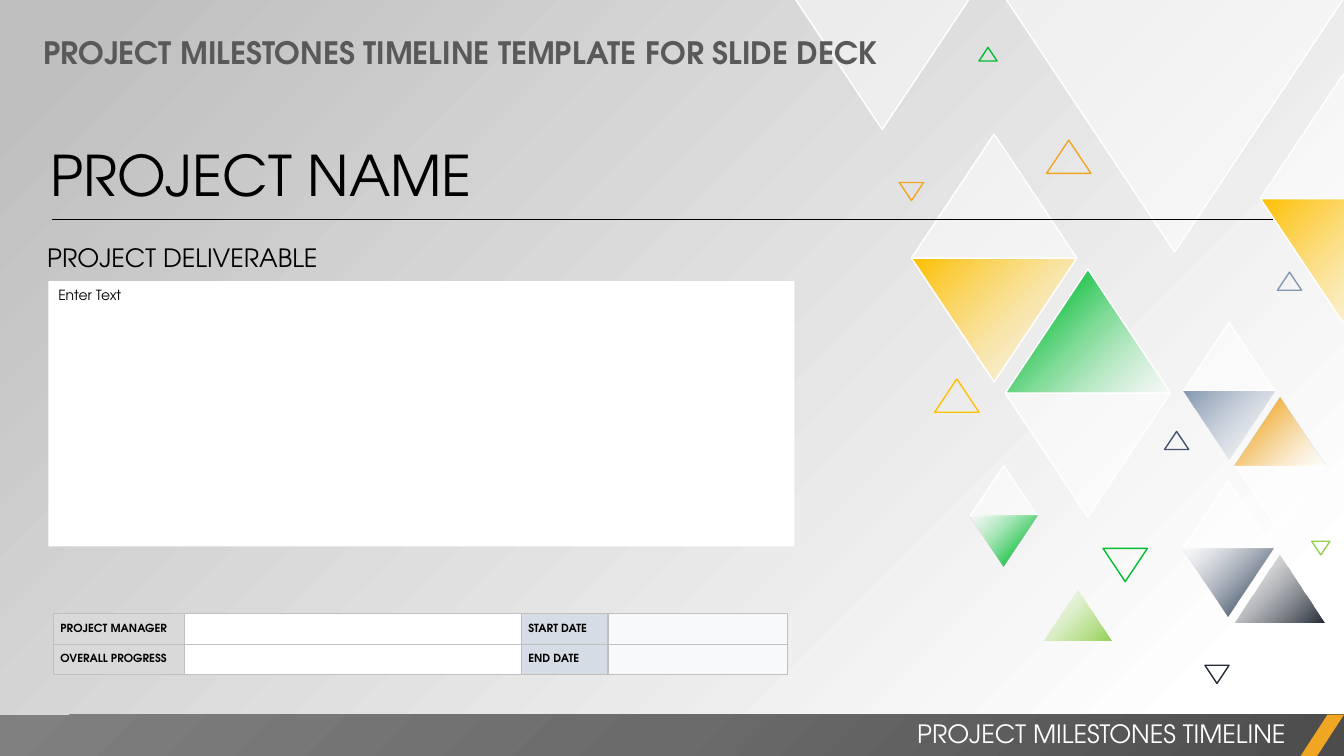
from lxml import etree
from pptx import Presentation
from pptx import util as u
from pptx.dml.color import RGBColor
from pptx.enum import shapes, text
from pptx.oxml import parse_xml
from pptx.oxml.ns import nsdecls, qn

FONT = "TeX Gyre Adventor"
WHITE, BLACK, GREY = "FFFFFF", "000000", "BFBFBF"
GOLD, ORANGE, GREEN, LIME = "FFC000", "F0A622", "00BD32", "92D050"
SLATE, STEEL, INK = "44546A", "8497B0", "222A35"
UP, DOWN = 0, 180
CORNER = ('<a:path path="circle"><a:fillToRect l="100000" t="100000"/></a:path>'
          '<a:tileRect r="-100000" b="-100000"/>')
DIAGONAL = '<a:lin ang="13500000" scaled="1"/>'

GHOSTS = [
    (9.04, 1.33, 1.64, UP), (9.97, 3.9, 1.64, DOWN), (9.97, -0.02, 3.36, DOWN),
    (11.73, 4.77, 0.9, UP), (11.74, 3.2, 0.9, UP), (12.25, 4.61, 0.9, DOWN),
    (9.62, 4.62, 0.67, UP), (12.5, 0.74, 1.64, UP), (7.88, -0.02, 1.74, DOWN),
]
FADING_OUT = [
    (9.04, 2.56, 1.64, DOWN, GOLD), (12.24, 5.5, 0.9, UP, INK),
    (11.74, 3.88, 0.9, DOWN, STEEL), (10.35, 5.85, 0.67, UP, LIME),
    (12.5, 1.97, 1.64, DOWN, GOLD),
]
FADING_IN = [
    (9.97, 2.67, 1.64, UP, GREEN), (11.73, 5.44, 0.9, DOWN, SLATE),
    (12.25, 3.94, 0.9, UP, ORANGE), (9.62, 5.12, 0.67, DOWN, GREEN),
]
OUTLINES = [
    (10.94, 5.44, 0.44, DOWN, GREEN), (9.27, 3.76, 0.44, UP, GOLD),
    (11.55, 4.28, 0.24, UP, SLATE), (11.95, 6.6, 0.24, DOWN, INK),
    (8.92, 1.81, 0.24, DOWN, ORANGE), (12.67, 2.7, 0.24, UP, STEEL),
    (9.71, 0.47, 0.18, UP, GREEN), (13.01, 5.37, 0.18, DOWN, LIME),
    (10.38, 1.39, 0.44, UP, ORANGE),
]
COLUMNS = [(1.3, "D9D9D9"), (3.34, WHITE), (0.86, "D6DCE5"), (1.78, "F7F9FB")]
ROWS = [("PROJECT MANAGER", "", "START DATE", ""),
        ("OVERALL PROGRESS", "", "END DATE", "")]


def rgb(value):
    return RGBColor.from_string(value)


def set_gradient(fill, properties, stops, direction):
    fill.solid()
    marks = "".join(
        f'<a:gs pos="{place * 1000}"><a:srgbClr val="{colour}">'
        f'<a:alpha val="{alpha * 1000}"/></a:srgbClr></a:gs>'
        for place, colour, alpha in stops)
    gradient = parse_xml(f'<a:gradFill {nsdecls("a")} rotWithShape="1">'
                         f'<a:gsLst>{marks}</a:gsLst>{direction}</a:gradFill>')
    properties.replace(properties.find(qn("a:solidFill")), gradient)


def add_block(page, kind, left, top, width, height, fill=None, line=None):
    block = page.shapes.add_shape(kind, *map(u.Inches, (left, top, width, height)))
    block.shadow.inherit = False
    if fill:
        block.fill.solid()
        block.fill.fore_color.rgb = rgb(fill)
    else:
        block.fill.background()
    if line:
        block.line.color.rgb = rgb(line)
        block.line.width = u.Pt(1)
    else:
        block.line.fill.background()
    return block


def add_triangle(page, left, top, width, turn, fill=None, line=None):
    triangle = add_block(page, shapes.MSO_SHAPE.ISOSCELES_TRIANGLE,
                         left, top, width, width * 0.75, fill, line)
    triangle.rotation = turn
    return triangle


def add_ghost(page, left, top, width, turn):
    ghost = add_triangle(page, left, top, width, turn, WHITE, WHITE)
    colour = ghost.element.spPr.find(qn("a:solidFill"))[0]
    etree.SubElement(colour, qn("a:alpha"), val="50000")


def add_shaded(page, left, top, width, turn, stops):
    line = WHITE if width > 1 else None
    shaded = add_triangle(page, left, top, width, turn, line=line)
    set_gradient(shaded.fill, shaded.element.spPr, stops, DIAGONAL)


def add_span(para, words, size, colour=BLACK, bold=False):
    span = para.add_run()
    span.text = words
    span.font.name = FONT
    span.font.size = u.Pt(size)
    span.font.bold = bold
    span.font.color.rgb = rgb(colour)


def write(box, words, size, colour=BLACK, bold=False, align=text.PP_ALIGN.LEFT):
    frame = box.text_frame
    frame.word_wrap = True
    frame.auto_size = text.MSO_AUTO_SIZE.NONE
    frame.vertical_anchor = text.MSO_ANCHOR.TOP
    para = frame.paragraphs[0]
    para.alignment = align
    add_span(para, words, size, colour, bold)


def add_label(page, left, top, width, height, *wording, **style):
    box = page.shapes.add_textbox(*map(u.Inches, (left, top, width, height)))
    write(box, *wording, **style)


def place_title(page):
    title = page.shapes.title
    title.left, title.top, title.width, title.height = map(
        u.Inches, (0.33, 0.28, 8.94, 0.47))
    write(title, "PROJECT MILESTONES TIMELINE TEMPLATE FOR SLIDE DECK",
          22, "595959", True)
    title.element.getparent().append(title.element)


def add_rule(page, left, right, top):
    rule = page.shapes.add_connector(
        shapes.MSO_CONNECTOR.STRAIGHT, *map(u.Inches, (left, top, right, top)))
    rule.line.color.rgb = rgb(BLACK)
    rule.line.width = u.Pt(0.5)
    etree.SubElement(rule.element.spPr, qn("a:effectLst"))


def format_cell(cell, words, fill):
    cell.fill.solid()
    cell.fill.fore_color.rgb = rgb(fill)
    cell.vertical_anchor = text.MSO_ANCHOR.MIDDLE
    cell.margin_left = cell.margin_right = u.Inches(0.07)
    cell.margin_top = cell.margin_bottom = 0
    para = cell.text_frame.paragraphs[0]
    para.line_spacing = 1.07
    if words:
        add_span(para, words, 8, bold=True)
    else:
        etree.SubElement(para._p, qn("a:endParaRPr"), sz="800")
    properties = cell._tc.get_or_add_tcPr()
    for index, side in enumerate("LRTB"):
        properties.insert(index, parse_xml(
            f'<a:ln{side} {nsdecls("a")} w="12700"><a:solidFill>'
            f'<a:srgbClr val="{GREY}"/></a:solidFill></a:ln{side}>'))


def add_details(page):
    frame = page.shapes.add_table(len(ROWS), len(COLUMNS),
                                  *map(u.Inches, (0.53, 6.09, 7.28, 0.6)))
    table = frame.table
    table.first_row = table.horz_banding = False
    for column, (width, _) in zip(table.columns, COLUMNS):
        column.width = u.Inches(width)
    for row, entries in zip(table.rows, ROWS):
        row.height = u.Inches(0.3)
        for cell, words, (_, fill) in zip(row.cells, entries, COLUMNS):
            format_cell(cell, words, fill)


def add_footer(page):
    band = add_block(page, shapes.MSO_SHAPE.RECTANGLE, 0, 7.09, 13.33, 0.41)
    set_gradient(band.fill, band.element.spPr,
                 [(0, "4C4C4C", 100), (50, "6B6B6B", 100), (100, "808080", 100)],
                 CORNER)
    accent = add_block(page, shapes.MSO_SHAPE.PARALLELOGRAM,
                       12.9, 7.09, 0.43, 0.41, ORANGE)
    accent.adjustments[0] = 0.65
    add_label(page, 5.25, 7.08, 7.6, 0.4, "PROJECT MILESTONES TIMELINE", 18,
              WHITE, align=text.PP_ALIGN.RIGHT)


def main():
    deck = Presentation()
    deck.slide_width, deck.slide_height = u.Inches(13.33), u.Inches(7.5)
    page = deck.slides.add_slide(deck.slide_layouts[5])
    backdrop = page.background.fill
    backdrop.solid()
    set_gradient(backdrop, page.element.find(".//" + qn("p:bgPr")),
                 [(9, WHITE, 100), (95, GREY, 100)], CORNER)

    for ghost in GHOSTS:
        add_ghost(page, *ghost)
    for *place, colour in FADING_OUT:
        add_shaded(page, *place, [(0, colour, 100), (100, WHITE, 50)])
    for *place, colour in FADING_IN:
        add_shaded(page, *place, [(0, WHITE, 50), (82, colour, 100)])
    for *place, colour in OUTLINES:
        add_triangle(page, *place, line=colour)

    place_title(page)
    add_footer(page)
    add_label(page, 0.4, 1.35, 12.27, 0.77, "PROJECT NAME", 40)
    add_rule(page, 0.52, 12.63, 2.18)
    add_details(page)
    add_label(page, 0.37, 2.36, 3.05, 0.4, "PROJECT DELIVERABLE", 18)
    panel = add_block(page, shapes.MSO_SHAPE.RECTANGLE, 0.48, 2.79, 7.4, 2.63, WHITE)
    write(panel, "Enter Text", 10)
    deck.save("out.pptx")


if __name__ == "__main__":
    main()
